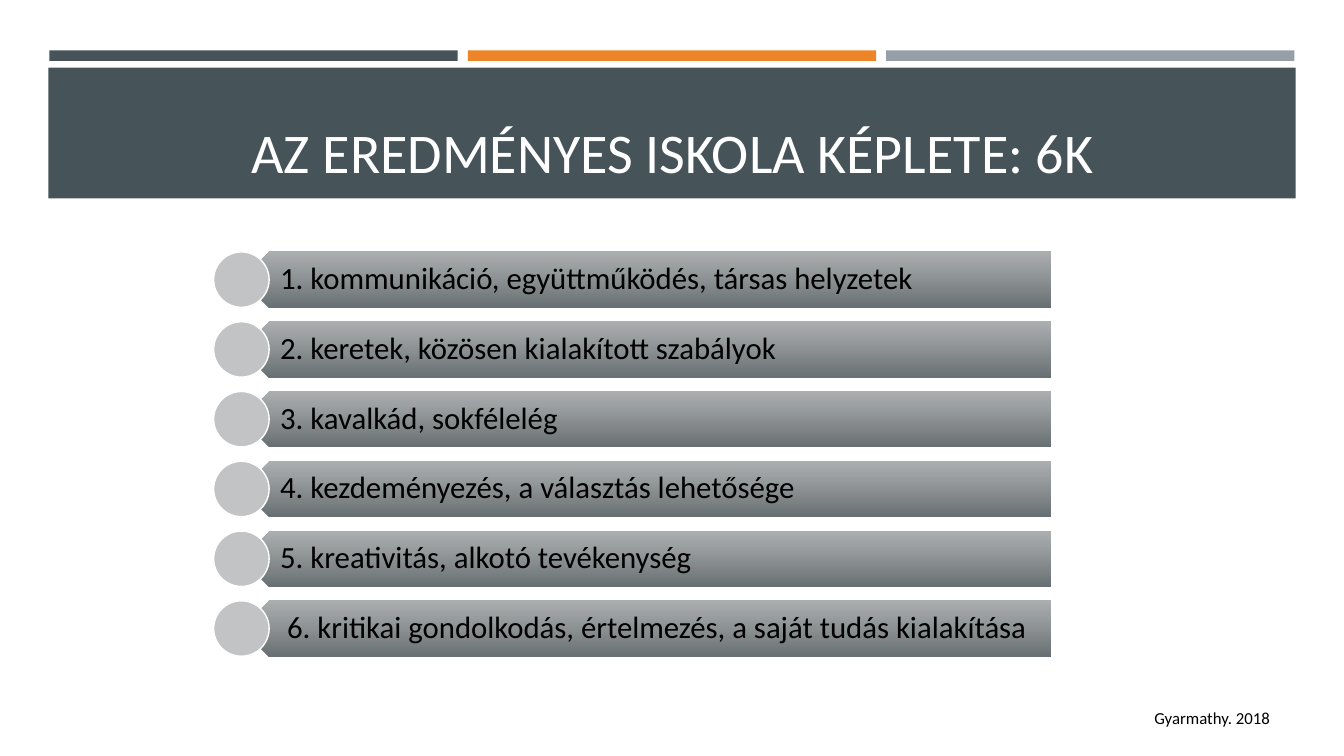
from dataclasses import dataclass

from lxml import etree
from pptx import Presentation
from pptx import util as u
from pptx.dml.color import RGBColor
from pptx.enum import shapes, text

WIDE, HIGH = u.Inches(13.33), u.Inches(7.5)
FONT = "Calibri"
SLATE, ORANGE, GRAY = "465359", "ED8428", "969FA7"
WHITE, BLACK, SILVER = "FFFFFF", "000000", "C1C3C4"
LIGHT, DARK = "A3A6A8", "697073"
KIND = shapes.MSO_SHAPE
ANCHOR, ALIGN = text.MSO_ANCHOR, text.PP_ALIGN

BAR_STEP = 31.13
ROW_TOP, ROW_STEP, ROW_HIGH = 33.33, 9.23, 7.33
POINTS = [
    "1. kommunikáció, együttműködés, társas helyzetek",
    "2. keretek, közösen kialakított szabályok",
    "3. kavalkád, sokfélelég",
    "4. kezdeményezés, a választás lehetősége",
    "5. kreativitás, alkotó tevékenység",
    "6. kritikai gondolkodás, értelmezés, a saját tudás kialakítása",
]


@dataclass
class Box:
    """A place given in percent of the slide's width and height."""
    left: float
    top: float
    wide: float
    high: float

    def place(self) -> tuple:
        return (across(self.left), down(self.top),
                across(self.wide), down(self.high))


def across(share: float) -> int:
    return round(WIDE * share / 100)


def down(share: float) -> int:
    return round(HIGH * share / 100)


def color(code: str) -> RGBColor:
    return RGBColor.from_string(code)


def assign(item, values: dict) -> None:
    for name, value in values.items():
        setattr(item, name, value)


def draw(slide, kind, box: Box, fill: str = "", line: str = ""):
    shape = slide.shapes.add_shape(kind, *box.place())
    shape.shadow.inherit = False
    if fill:
        shape.fill.solid()
        shape.fill.fore_color.rgb = color(fill)
    if line:
        shape.line.color.rgb = color(line)
        shape.line.width = u.Pt(1)
    else:
        shape.line.fill.background()
    return shape


def shade(shape) -> None:
    """Fade from light at the top to dark, whatever the shape's rotation."""
    shape.fill.gradient()
    shape.fill.gradient_angle = 270
    for stop, code, spot in zip(shape.fill.gradient_stops, (LIGHT, DARK), (0, 1)):
        stop.color.rgb = color(code)
        stop.position = spot
    grad = shape.element.spPr.find("{*}gradFill")
    grad.set("rotWithShape", "0")
    first = grad.find(".//{*}srgbClr")
    tag = etree.QName(first).namespace
    etree.SubElement(first, f"{{{tag}}}alpha").set("val", "90000")


def write(slide, box: Box, words: str, size: int, ink: str = BLACK,
          frame: dict = {}, para: dict = {}) -> None:
    body = slide.shapes.add_textbox(*box.place()).text_frame
    assign(body, {"word_wrap": True, **frame})
    line = body.paragraphs[0]
    assign(line, para)
    run = line.add_run()
    run.text = words
    assign(run.font, {"size": u.Pt(size), "name": FONT})
    run.font.color.rgb = color(ink)


def head(slide) -> None:
    for i, fill in enumerate((SLATE, ORANGE, GRAY)):
        draw(slide, KIND.RECTANGLE,
             Box(3.68 + i * BAR_STEP, 6.67, 30.38, 1.4), fill)
    draw(slide, KIND.RECTANGLE, Box(3.6, 8.93, 92.8, 17.33), SLATE)
    write(slide, Box(4.8, 10.27, 90.47, 14.8),
          "AZ EREDMÉNYES ISKOLA KÉPLETE: 6K", 40, WHITE,
          {"vertical_anchor": ANCHOR.BOTTOM}, {"alignment": ALIGN.CENTER})


def points(slide) -> None:
    frame = {"vertical_anchor": ANCHOR.MIDDLE,
             "margin_left": across(1.8), "margin_right": across(1.28),
             "margin_top": down(1.2), "margin_bottom": down(1.2)}
    for i, words in enumerate(POINTS):
        top = ROW_TOP + i * ROW_STEP
        plate = draw(slide, KIND.PENTAGON, Box(18, top, 60.16, ROW_HIGH))
        plate.rotation = 180
        shade(plate)
        last = i == len(POINTS) - 1
        write(slide, Box(19.05, top, 59.11, ROW_HIGH), words, 22, frame=frame,
              para={"line_spacing": 0.9,
                    "alignment": ALIGN.CENTER if last else ALIGN.LEFT})
        draw(slide, KIND.OVAL, Box(15.9, top, 4.13, ROW_HIGH), SILVER, WHITE)


def main() -> None:
    deck = Presentation()
    assign(deck, {"slide_width": WIDE, "slide_height": HIGH})
    slide = deck.slides.add_slide(deck.slide_layouts[6])
    head(slide)
    points(slide)
    write(slide, Box(85.15, 92.93, 20.18, 4), "Gyarmathy. 2018", 12,
          frame={"auto_size": text.MSO_AUTO_SIZE.SHAPE_TO_FIT_TEXT})
    deck.save("out.pptx")


if __name__ == "__main__":
    main()
